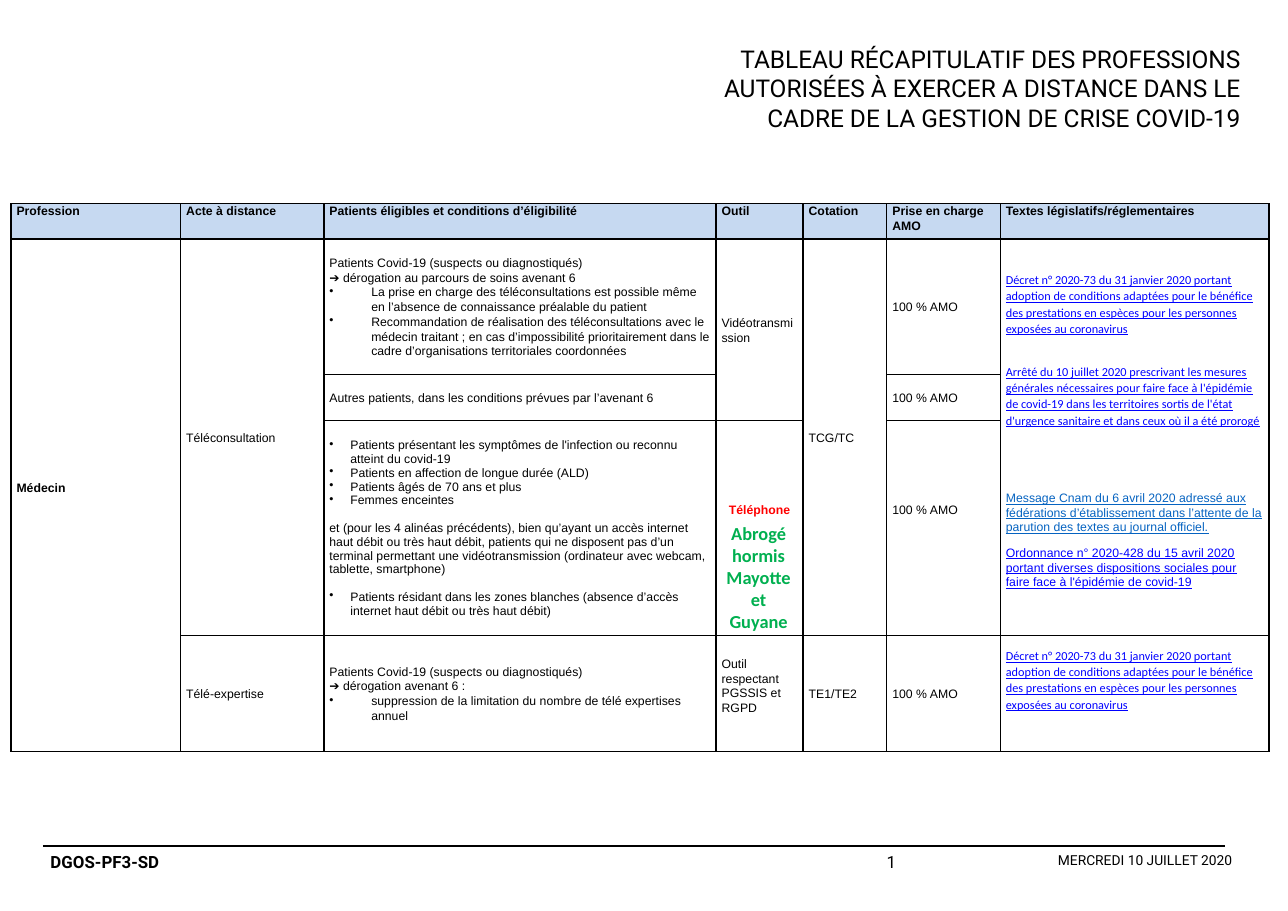
from dataclasses import dataclass, field

from lxml import etree
from pptx import Presentation
from pptx import util as u
from pptx.dml.color import RGBColor
from pptx.enum import shapes, text
from pptx.oxml import ns

PX = 9144  # 100 px to the inch
COLORS = {"black": "000000", "header": "C6D9F1", "link": "0000FF", "message": "0563C1",
          "alert": "FF0000", "repealed": "00B050"}
COLUMNS = [154, 130, 356, 79, 76, 103, 244]
ROWS = [32, 123, 42, 195, 105]
HEADERS = ["Profession", "Acte à distance", "Patients éligibles et conditions d’éligibilité",
           "Outil", "Cotation", "Prise en charge AMO", "Textes législatifs/réglementaires"]
LEFT, CENTER, RIGHT = text.PP_ALIGN.LEFT, text.PP_ALIGN.CENTER, text.PP_ALIGN.RIGHT
TOP, MIDDLE = text.MSO_ANCHOR.TOP, text.MSO_ANCHOR.MIDDLE


@dataclass
class Line:
    """One paragraph; indent is the hanging indent of a bullet, before is in points."""
    words: str
    size: int = 8
    font: str = "Arial"
    color: str = "black"
    bold: bool = False
    underline: bool = False
    align: int = LEFT
    indent: int = 0
    before: float = 0
    spacing: float = 1.07


@dataclass
class Entry:
    """Content of a table cell, which may span several rows."""
    lines: list = field(default_factory=list)
    span: int = 1
    top: int = 0
    bottom: int = 0
    anchor: int = MIDDLE
    fill: str = ""


def link(words, font="Calibri", color="link", before=0):
    return Line(words, font=font, color=color, underline=True, before=before)


def bullet(words, indent=38, **style):
    return Line(words, indent=indent, **style)


DECREE = ("Décret n° 2020-73 du 31 janvier 2020 portant adoption de conditions adaptées pour le "
          "bénéfice des prestations en espèces pour les personnes exposées au coronavirus")
ORDER = ("Arrêté du 10 juillet 2020 prescrivant les mesures générales nécessaires pour faire face "
         "à l'épidémie de covid-19 dans les territoires sortis de l'état d'urgence sanitaire et "
         "dans ceux où il a été prorogé")
MESSAGE = ("Message Cnam du 6 avril 2020 adressé aux fédérations d’établissement dans l’attente "
           "de la parution des textes au journal officiel.")
ORDINANCE = ("Ordonnance n° 2020-428 du 15 avril 2020 portant diverses dispositions sociales pour "
             "faire face à l'épidémie de covid-19")
COVID_PATIENTS = "Patients Covid-19 (suspects ou diagnostiqués)"
FULL_COVER = Line("100 % AMO")

ENTRIES = {
    (1, 0): Entry([Line("Médecin", bold=True)], span=4, bottom=14),
    (1, 1): Entry([Line("Téléconsultation")], span=3),
    (1, 2): Entry([
        Line(COVID_PATIENTS),
        Line("➔ dérogation au parcours de soins avenant 6"),
        bullet("La prise en charge des téléconsultations est possible même en l’absence de "
               "connaissance préalable du patient"),
        bullet("Recommandation de réalisation des téléconsultations avec le médecin traitant ; "
               "en cas d’impossibilité prioritairement dans le cadre d’organisations "
               "territoriales coordonnées")]),
    (1, 3): Entry([Line("Vidéotransmission")], span=2),
    (1, 4): Entry([Line("TCG/TC")], span=3),
    (1, 5): Entry([FULL_COVER]),
    (1, 6): Entry([link(DECREE), link(ORDER, before=18),
                   link(MESSAGE, "Arial", "message", 40.5),
                   link(ORDINANCE, "Arial", before=7)], span=3, top=30, anchor=TOP),
    (2, 2): Entry([Line("Autres patients, dans les conditions prévues par l’avenant 6")]),
    (2, 5): Entry([FULL_COVER]),
    (3, 2): Entry([
        bullet("Patients présentant les symptômes de l'infection ou reconnu atteint du covid-19",
               19, spacing=1),
        bullet("Patients en affection de longue durée (ALD)", 19, spacing=1),
        bullet("Patients âgés de 70 ans et plus", 19, spacing=1),
        bullet("Femmes enceintes", 19, spacing=1),
        Line("et (pour les 4 alinéas précédents), bien qu’ayant un accès internet haut débit ou "
             "très haut débit, patients qui ne disposent pas d’un terminal permettant une "
             "vidéotransmission (ordinateur avec webcam, tablette, smartphone)",
             before=9, spacing=1),
        bullet("Patients résidant dans les zones blanches (absence d’accès internet haut débit "
               "ou très haut débit)", 19, before=9, spacing=1)]),
    (3, 3): Entry([Line("Téléphone", color="alert", bold=True, align=CENTER)], bottom=34),
    (3, 5): Entry([FULL_COVER], bottom=34),
    (4, 1): Entry([Line("Télé-expertise")]),
    (4, 2): Entry([
        Line(COVID_PATIENTS),
        Line("➔ dérogation avenant 6 :"),
        bullet("suppression de la limitation du nombre de télé expertises annuel")]),
    (4, 3): Entry([Line("Outil respectant PGSSIS et RGPD")], bottom=14),
    (4, 4): Entry([Line("TE1/TE2")]),
    (4, 5): Entry([FULL_COVER]),
    (4, 6): Entry([link(DECREE)], bottom=24),
}
for column, header in enumerate(HEADERS):
    ENTRIES[0, column] = Entry([Line(header, bold=True)], anchor=TOP, fill="header")


def rgb(name):
    return RGBColor.from_string(COLORS[name])


def write(text_frame, lines):
    text_frame.text = "\n".join(line.words for line in lines)
    for paragraph, line in zip(text_frame.paragraphs, lines):
        if line.indent:
            properties = paragraph._p.get_or_add_pPr()
            properties.set("marL", str(line.indent * PX))
            properties.set("indent", str(-line.indent * PX))
            etree.SubElement(properties, ns.qn("a:buChar")).set("char", "•")
        paragraph.alignment = line.align
        paragraph.line_spacing = line.spacing
        if line.before:
            paragraph.space_before = u.Pt(line.before)
        for run in paragraph.runs:
            font = run.font
            font.name, font.size = line.font, u.Pt(line.size)
            font.bold, font.underline = line.bold, line.underline
            font.color.rgb = rgb(line.color)


def add_text(slide, box, lines):
    text_frame = slide.shapes.add_textbox(*(length * PX for length in box)).text_frame
    text_frame.word_wrap = True
    write(text_frame, lines)


def add_borders(cell):
    properties = cell._tc.get_or_add_tcPr()
    for side in ("lnL", "lnR", "lnT", "lnB"):
        border = etree.SubElement(properties, ns.qn(f"a:{side}"), w=str(u.Pt(1)))
        fill = etree.SubElement(border, ns.qn("a:solidFill"))
        etree.SubElement(fill, ns.qn("a:srgbClr"), val=COLORS["black"])


def add_professions_table(slide, left, top):
    frame = slide.shapes.add_table(len(ROWS), len(COLUMNS), left * PX, top * PX,
                                   sum(COLUMNS) * PX, sum(ROWS) * PX)
    table = frame.table
    table.first_row = table.horz_banding = False
    for column, width in zip(table.columns, COLUMNS):
        column.width = width * PX
    for row, height in zip(table.rows, ROWS):
        row.height = height * PX
    for row in range(len(ROWS)):
        for column in range(len(COLUMNS)):
            cell = table.cell(row, column)
            entry = ENTRIES.get((row, column), Entry())
            add_borders(cell)
            if entry.fill:
                cell.fill.solid()
                cell.fill.fore_color.rgb = rgb(entry.fill)
            else:
                cell.fill.background()
            cell.margin_left = cell.margin_right = 5 * PX
            cell.margin_top, cell.margin_bottom = entry.top * PX, entry.bottom * PX
            cell.vertical_anchor = entry.anchor
            if entry.lines:
                write(cell.text_frame, entry.lines)
            if entry.span > 1:
                cell.merge(table.cell(row + entry.span - 1, column))


def add_footer(slide, left, top):
    rule = slide.shapes.add_connector(shapes.MSO_CONNECTOR.STRAIGHT, (left + 3) * PX, top * PX,
                                      (left + 1076) * PX, top * PX)
    rule.line.color.rgb = rgb("black")
    rule.line.width = u.Pt(0.8)
    etree.SubElement(rule._element.spPr, ns.qn("a:effectLst"))
    add_text(slide, (left, top, 622, 29),
             [Line("DGOS-PF3-SD", 11, "Roboto", bold=True, spacing=1)])
    add_text(slide, (left + 759, top, 60, 39), [Line("1", 11, "Roboto", spacing=1)])
    add_text(slide, (left + 833, top, 259, 39),
             [Line("MERCREDI 10 JUILLET 2020", 9, "Roboto", align=RIGHT, spacing=1)])


def main():
    presentation = Presentation()
    presentation.slide_width, presentation.slide_height = 1169 * PX, 827 * PX
    slide = presentation.slides.add_slide(presentation.slide_layouts[6])
    add_footer(slide, 36, 768)
    add_text(slide, (585, 35, 551, 91), [
        Line("TABLEAU RÉCAPITULATIF DES PROFESSIONS AUTORISÉES À EXERCER A DISTANCE DANS LE "
             "CADRE DE LA GESTION DE CRISE COVID-19", 16, "Roboto", align=RIGHT, spacing=1)])
    add_professions_table(slide, 10, 185)
    add_text(slide, (639, 469, 99, 111), [
        Line(words, 12, "Calibri", "repealed", bold=True, align=CENTER, spacing=1)
        for words in ("Abrogé", "hormis Mayotte", "et", "Guyane")])
    presentation.save("out.pptx")


if __name__ == "__main__":
    main()
